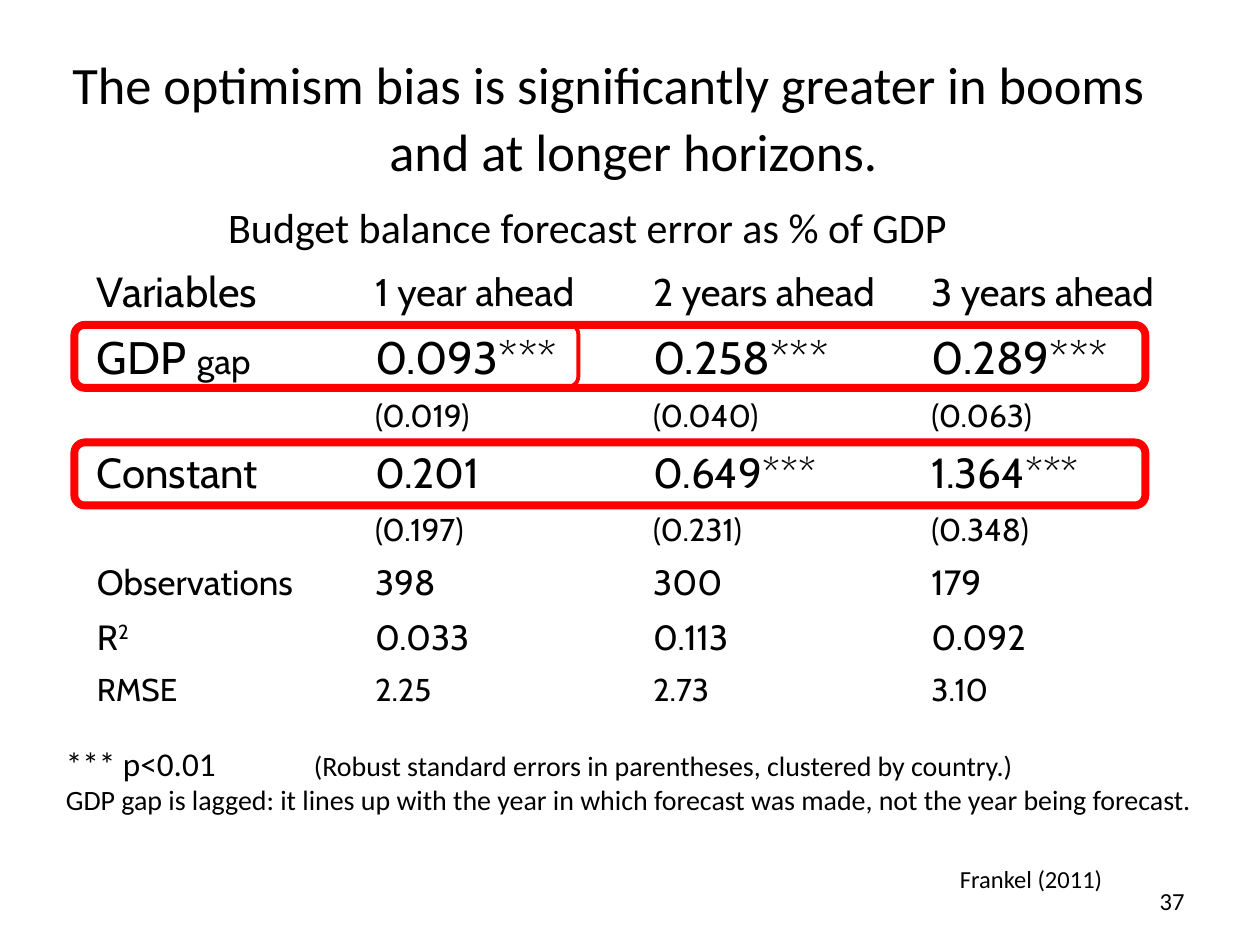
from pptx import Presentation
from pptx.dml.color import RGBColor
from pptx.enum import shapes, text
from pptx.util import Cm, Pt

SERIF_FREE, TABLE_FONT = "Calibri", "Cabin"
BLACK, WHITE, RED = "000000", "FFFFFF", "FF0000"

TITLE = ["The optimism bias is significantly greater in booms",
         "and at longer horizons."]
CAPTION = "Budget balance forecast error as % of GDP"
SOURCE = "Frankel (2011)"
SLIDE_NUMBER = "37"

# Each row: height in cm, label runs (text, size, superscript), value size, values
ROWS = [
    (1.27, [("Variables", 24)], 22, ["1 year ahead", "2 years ahead", "3 years ahead"]),
    (1.35, [("GDP ", 26), ("gap", 20)], 26, ["0.093***", "0.258***", "0.289***"]),
    (1.02, [], 18, ["(0.019)", "(0.040)", "(0.063)"]),
    (1.27, [("Constant", 24)], 24, ["0.201", "0.649***", "1.364***"]),
    (1.02, [], 18, ["(0.197)", "(0.231)", "(0.348)"]),
    (1.09, [("Observations", 20)], 20, ["398", "300", "179"]),
    (1.09, [("R", 20), ("2", 20, True)], 20, ["0.033", "0.113", "0.092"]),
    (1.02, [("RMSE", 18)], 18, ["2.25", "2.73", "3.10"]),
]
NOTES = [
    [("*** p<0.01", 19),
     ("\t(Robust standard errors in parentheses, clustered by country.)", 16)],
    [("GDP gap is lagged: it lines up with the year in which forecast was made, "
      "not the year being forecast.", 16)],
]
# Outlines: top and width in cm, line width in points
CONSTANT_THIN = (8.89, 21.59, 2.25)
GAP_ROW = (6.55, 21.59, 4.5)
GAP_ONE_YEAR = (6.53, 10.16, 2.25)
CONSTANT_ROW = (8.92, 21.59, 4.5)


def rgb(value):
    return RGBColor.from_string(value)


def add_runs(p, runs, font=SERIF_FREE):
    for content, size, *superscript in runs:
        r = p.add_run()
        r.text = content
        r.font.name, r.font.size, r.font.bold = font, Pt(size), False
        r.font.color.rgb = rgb(BLACK)
        if superscript:
            r.font._element.set("baseline", "30000")


def fill_frame(tf, lines, align=text.PP_ALIGN.LEFT, font=SERIF_FREE):
    tf.word_wrap = True
    for i, runs in enumerate(lines):
        p = tf.paragraphs[0] if i == 0 else tf.add_paragraph()
        p.alignment = align
        add_runs(p, runs, font)


def add_text(s, box, lines, align=text.PP_ALIGN.LEFT):
    sp = s.shapes.add_textbox(*map(Cm, box))
    fill_frame(sp.text_frame, lines, align)
    return sp


def add_panel(s, box, lines):
    """White text panel with almost no inner margin."""
    sp = s.shapes.add_shape(shapes.MSO_SHAPE.RECTANGLE, *map(Cm, box))
    sp.shadow.inherit = False
    sp.fill.solid()
    sp.fill.fore_color.rgb = rgb(WHITE)
    sp.line.fill.background()
    tf = sp.text_frame
    tf.margin_left = tf.margin_right = tf.margin_top = tf.margin_bottom = Cm(0.03)
    tf.vertical_anchor = text.MSO_ANCHOR.MIDDLE
    fill_frame(tf, lines)
    return sp


def add_outline(s, top, width, weight):
    sp = s.shapes.add_shape(shapes.MSO_SHAPE.ROUNDED_RECTANGLE,
                            Cm(1.5), Cm(top), Cm(width), Cm(1.27))
    sp.shadow.inherit = False
    sp.fill.background()
    sp.line.color.rgb = rgb(RED)
    sp.line.width = Pt(weight)


def add_title(s):
    sp = s.shapes.title
    sp.left, sp.top, sp.width, sp.height = map(Cm, (1.17, 0.86, 22.2, 2.72))
    tf = sp.text_frame
    tf.auto_size = text.MSO_AUTO_SIZE.NONE
    tf.vertical_anchor = text.MSO_ANCHOR.TOP
    fill_frame(tf, [[(line, 30)] for line in TITLE], text.PP_ALIGN.CENTER)
    for p in tf.paragraphs:
        p.line_spacing = Pt(38)
        p.space_before = Pt(0)
    # The second line sits slightly to the right of the first
    tf.paragraphs[1]._p.get_or_add_pPr().set("marL", str(Cm(1)))


def add_results(s):
    height = sum(row[0] for row in ROWS)
    table = s.shapes.add_table(len(ROWS), 4, Cm(1.7), Cm(5.26),
                               Cm(22.43), Cm(height)).table
    table.first_row = table.horz_banding = False
    for i, (row_height, label, size, values) in enumerate(ROWS):
        table.rows[i].height = Cm(row_height)
        for j, runs in enumerate([label] + [[(v, size)] for v in values]):
            cell = table.cell(i, j)
            cell.fill.background()
            cell.vertical_anchor = text.MSO_ANCHOR.MIDDLE
            fill_frame(cell.text_frame, [runs], font=TABLE_FONT)


def add_notes_panel(s):
    sp = add_panel(s, (1.3, 14.94, 23.19, 1.55), NOTES)
    pPr = sp.text_frame.paragraphs[0]._p.get_or_add_pPr()
    tabs = pPr.makeelement(pPr.tag.replace("pPr", "tabLst"), {})
    tabs.append(tabs.makeelement(pPr.tag.replace("pPr", "tab"),
                                 {"pos": str(Cm(5)), "algn": "l"}))
    pPr.append(tabs)


def main():
    prs = Presentation()
    prs.slide_width, prs.slide_height = Cm(25.4), Cm(19.05)
    s = prs.slides.add_slide(prs.slide_layouts[5])
    add_title(s)
    number = add_text(s, (18.21, 17.65, 5.92, 1.02), [[(SLIDE_NUMBER, 14)]],
                      text.PP_ALIGN.RIGHT)
    number.text_frame.vertical_anchor = text.MSO_ANCHOR.MIDDLE
    add_results(s)
    add_panel(s, (4.57, 4.04, 16.74, 1.07), [[(CAPTION, 24)]])
    add_notes_panel(s)
    add_text(s, (19.1, 17.3, 3.81, 1.02), [[(SOURCE, 14)]])
    for outline in (CONSTANT_THIN, GAP_ROW, GAP_ONE_YEAR, CONSTANT_ROW):
        add_outline(s, *outline)
    prs.save("out.pptx")


if __name__ == "__main__":
    main()
